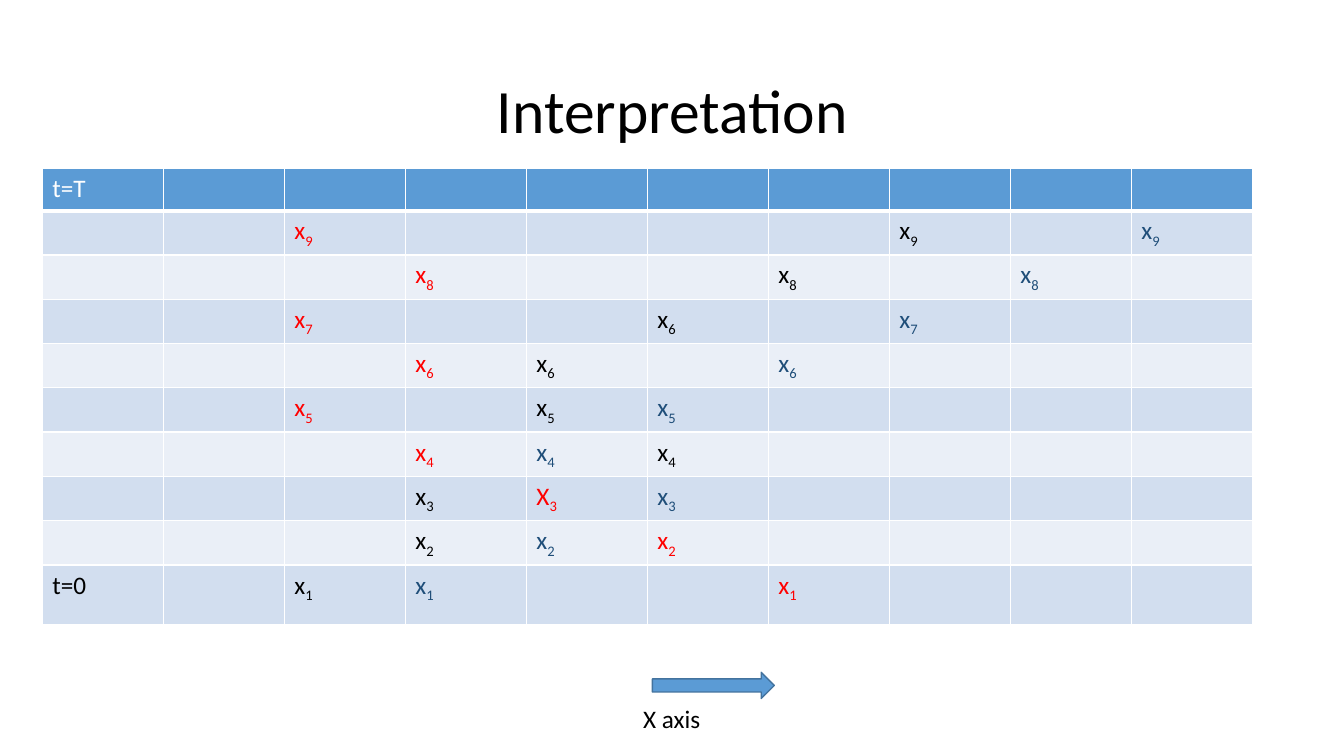
import lxml.etree
import pptx
import pptx.dml.color
import pptx.enum.shapes
import pptx.enum.text
import pptx.oxml.ns
import pptx.util

PX = 9144  # EMU per px, 100 px to the inch
COLORS = {"black": "000000", "white": "FFFFFF", "red": "FF0000", "navy": "1F4E79",
          "blue": "5B9BD5", "outline": "43739E", "band_dark": "D2DEEF", "band_light": "EAEFF7"}
BODY = {"name": "Calibri", "size": pptx.util.Pt(18), "bold": False}
TITLE = {**BODY, "size": pptx.util.Pt(44)}

# Column of each point x1 to x9, one path per colour
PATHS = {"black": [2, 3, 3, 5, 4, 4, 5, 6, 7],
         "navy": [3, 4, 5, 4, 5, 6, 7, 8, 9],
         "red": [6, 5, 4, 3, 2, 3, 2, 3, 2]}
SPECIAL_LABELS = {("black", 7): ("x", "6"), ("red", 3): ("X", "3")}
COLUMNS, COLUMN_WIDTH = 10, 120
ROW_HEIGHTS = [42] * 9 + [59]


def px(*lengths):
    return [pptx.util.Emu(n * PX) for n in lengths]


def rgb(color):
    return pptx.dml.color.RGBColor.from_string(COLORS[color])


def add_run(p, text, color, style=BODY, subscript=False):
    r = p.add_run()
    r.text = text
    for name, value in style.items():
        setattr(r.font, name, value)
    r.font.color.rgb = rgb(color)
    if subscript:
        r.font._element.set("baseline", "-25000")


def format_title(s, text, box):
    sp = s.shapes.title
    sp.left, sp.top, sp.width, sp.height = px(*box)
    tf = sp.text_frame
    tf.vertical_anchor = pptx.enum.text.MSO_ANCHOR.MIDDLE
    p = tf.paragraphs[0]
    p.alignment = pptx.enum.text.PP_ALIGN.CENTER
    p.line_spacing = 0.9
    add_run(p, text, "black", TITLE)


def format_cell(cell, color, is_header):
    # Borders come before the fill in the cell properties
    tc_pr = cell._tc.get_or_add_tcPr()
    for side in "LRTB":
        points = 3 if is_header and side == "B" else 1
        ln = lxml.etree.SubElement(tc_pr, pptx.oxml.ns.qn(f"a:ln{side}"),
                                   w=str(pptx.util.Pt(points)))
        fill = lxml.etree.SubElement(ln, pptx.oxml.ns.qn("a:solidFill"))
        lxml.etree.SubElement(fill, pptx.oxml.ns.qn("a:srgbClr"), val=COLORS["white"])
    cell.fill.solid()
    cell.fill.fore_color.rgb = rgb(color)


def add_path_table(s, left, top):
    rows = len(ROW_HEIGHTS)
    box = px(left, top, COLUMNS * COLUMN_WIDTH, sum(ROW_HEIGHTS))
    table = s.shapes.add_table(rows, COLUMNS, *box).table
    for column in table.columns:
        column.width = px(COLUMN_WIDTH)[0]
    for i, height in enumerate(ROW_HEIGHTS):
        table.rows[i].height = px(height)[0]
        color = "blue" if i == 0 else "band_dark" if i % 2 else "band_light"
        for cell in table.rows[i].cells:
            format_cell(cell, color, i == 0)

    # Time labels
    for row, text, color in [(0, "t=T", "white"), (rows - 1, "t=0", "black")]:
        add_run(table.cell(row, 0).text_frame.paragraphs[0], text, color)

    # Points, with time running upwards
    for color, columns in PATHS.items():
        for step, column in enumerate(columns, 1):
            letter, index = SPECIAL_LABELS.get((color, step), ("x", str(step)))
            p = table.cell(rows - step, column).text_frame.paragraphs[0]
            add_run(p, letter, color)
            add_run(p, index, color, subscript=True)


def add_arrow(s, box):
    sp = s.shapes.add_shape(pptx.enum.shapes.MSO_SHAPE.RIGHT_ARROW, *px(*box))
    sp.shadow.inherit = False
    sp.fill.solid()
    sp.fill.fore_color.rgb = rgb("blue")
    sp.line.color.rgb = rgb("outline")
    sp.line.width = pptx.util.Pt(1)


def add_label(s, text, box):
    tf = s.shapes.add_textbox(*px(*box)).text_frame
    tf.word_wrap = False
    tf.auto_size = pptx.enum.text.MSO_AUTO_SIZE.SHAPE_TO_FIT_TEXT
    add_run(tf.paragraphs[0], text, "black")


def main():
    prs = pptx.Presentation()
    prs.slide_width, prs.slide_height = px(1333, 750)
    s = prs.slides.add_slide(prs.slide_layouts.get_by_name("Title Only"))
    format_title(s, "Interpretation", (92, 40, 1150, 145))
    add_path_table(s, 42, 167)
    # Horizontal axis
    add_arrow(s, (647, 667, 121, 26))
    add_label(s, "X axis", (628, 693, 83, 40))
    prs.save("out.pptx")


if __name__ == "__main__":
    main()
